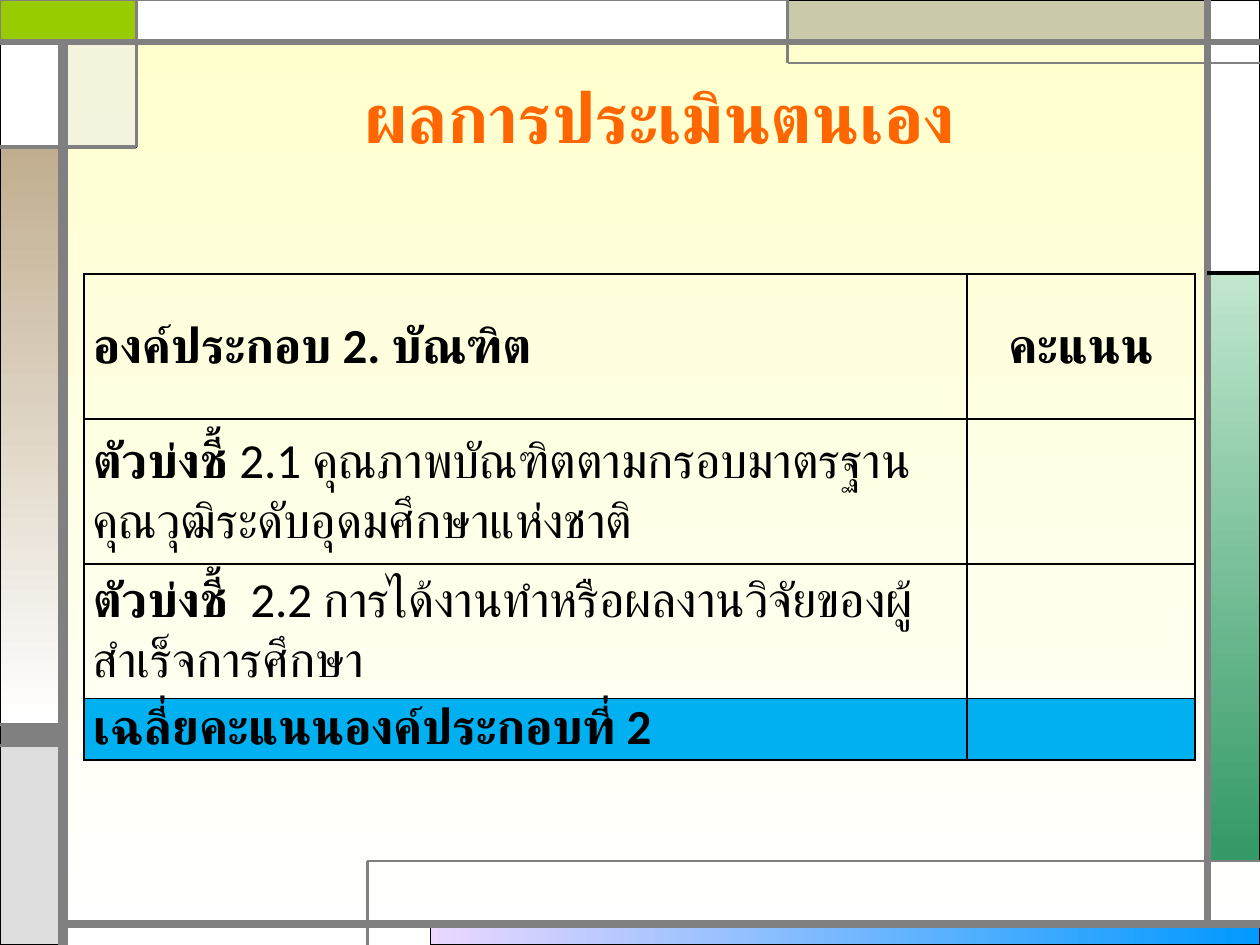
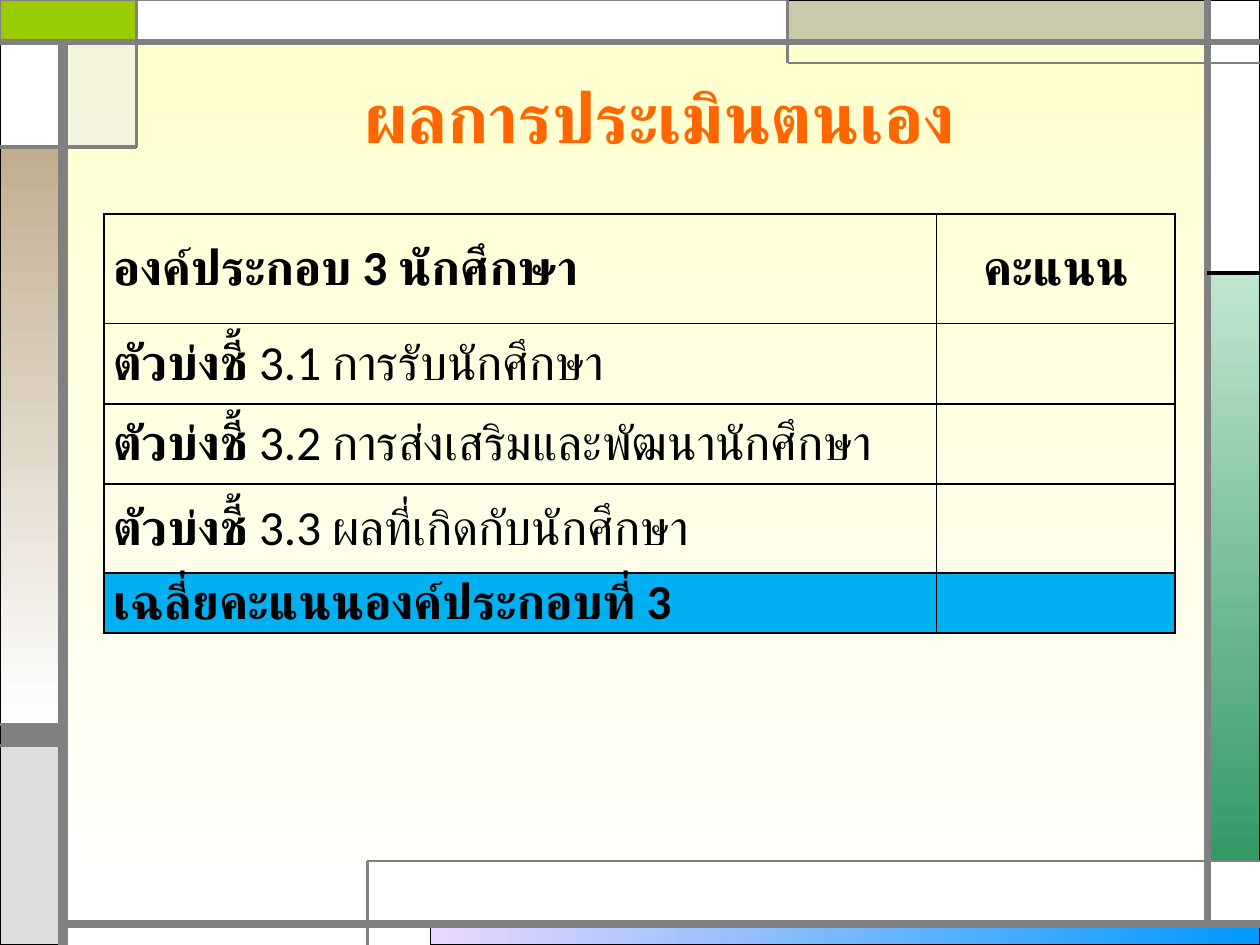
from dataclasses import dataclass

from lxml import etree
from pptx import Presentation
from pptx import util as u
from pptx.dml.color import RGBColor
from pptx.enum import shapes, text
from pptx.oxml import ns

COLS, ROWS = 120, 90
CELL = u.Inches(10) // COLS


@dataclass(frozen=True)
class Theme:
    font: str = "Calibri"
    head: int = 40
    body: int = 28
    title: str = "FF6600"
    ink: str = "000000"
    rule: str = "808080"
    total: str = "00B0F0"
    page: tuple = ("FFFFCC", "FFFFFF", 270)
    white: str = "FFFFFF"
    lime: str = "99CC00"
    khaki: str = "CAC9AA"
    mist: str = "EAEAEA"
    ash: str = "DDDDDD"
    sand: tuple = ("C1AE8F", "FFFFFF", 270)
    green: tuple = ("C1E7CE", "339966", 270)
    sky: tuple = ("EBD7FF", "0099FF", 0)


def grid(*sizes):
    return [round(size * CELL) for size in sizes]


def sub(parent, tag, **attrs):
    return etree.SubElement(parent, ns.qn(tag), attrs)


def paint(fill, color):
    """Fill with one colour, or with a (start, end, angle) gradient."""
    if isinstance(color, str):
        fill.solid()
        fill.fore_color.rgb = RGBColor.from_string(color)
        return
    *ends, angle = color
    fill.gradient()
    fill.gradient_angle = angle
    for stop, end in zip(fill.gradient_stops, ends):
        stop.color.rgb = RGBColor.from_string(end)


class Deck:
    def __init__(self, theme):
        self.theme = theme
        self.prs = Presentation()
        self.prs.slide_width, self.prs.slide_height = grid(COLS, ROWS)
        self.master = self.prs.slide_master
        self.slide = None
        paint(self.master.background.fill, theme.page)

    def page(self, title):
        self.slide = self.prs.slides.add_slide(self.prs.slide_layouts[5])
        box = self.slide.shapes.title
        box.left, box.top, box.width, box.height = grid(11.8, 3.5, 102, 15)
        frame = box.text_frame
        frame.text = title
        frame.vertical_anchor = text.MSO_ANCHOR.MIDDLE
        frame.paragraphs[0].alignment = text.PP_ALIGN.CENTER
        self.style(frame.paragraphs[0].runs[0], self.theme.head,
                   self.theme.title)

    def style(self, run, size, color, bold=True):
        font = run.font
        font.name, font.size, font.bold = self.theme.font, u.Pt(size), bold
        font.color.rgb = RGBColor.from_string(color)
        sub(font._element, "a:cs", typeface=self.theme.font)

    def stroke(self, line, color, width):
        paint(line.fill, color)
        line.width = u.Pt(width)

    def block(self, group, box, fill, edge=None, width=0.75, alpha=None):
        shape = group.shapes.add_shape(shapes.MSO_SHAPE.RECTANGLE, *grid(*box))
        shape.shadow.inherit = False
        paint(shape.fill, fill)
        if alpha:
            color = shape.element.spPr.find(".//" + ns.qn("a:srgbClr"))
            sub(color, "a:alpha", val=str(alpha * 1000))
        self.stroke(shape.line, edge or self.theme.ink, width)

    def rule(self, group, ends, width, color=None):
        line = group.shapes.add_connector(shapes.MSO_CONNECTOR.STRAIGHT,
                                          *grid(*ends))
        self.stroke(line.line, color or self.theme.rule, width)
        sub(line.element.spPr, "a:effectLst")

    def frame(self):
        """Draw the border of blocks and rules, then move it to the master."""
        t = self.theme
        group = self.slide.shapes.add_group_shape()
        for box, fill, *rest in (
            ((41, 88, 79, 2), t.sky),
            ((115, 26, 5, 56), t.green),
            ((0, 69, 6, 2), t.rule),
            ((0, 71, 6, 19), t.ash),
            ((115, 0, 5, 26), t.white),
            ((75, 0, 40, 4), t.khaki),
            ((6, 4, 7, 10), t.mist, t.ink, 0.75, 50),
            ((0, 14, 6, 55), t.sand),
            ((0, 4, 6, 10), t.white),
            ((0, 0, 13, 4), t.lime, t.rule, 1.5),
            ((13, 0, 62, 4), t.white, t.rule),
        ):
            self.block(group, box, fill, *rest)
        for ends, width, *rest in (
            ((6, 90, 6, 4), 6),
            ((6, 88, 120, 88), 4.5),
            ((115, 88, 115, 0), 4.5),
            ((0, 4, 120, 4), 3),
            ((120, 6, 75, 6), 1.5),
            ((75, 6, 75, 0), 1.5),
            ((115, 26, 120, 26), 2.25, t.ink),
            ((13, 0, 13, 14), 1.5),
            ((13, 14, 0, 14), 2.25),
            ((35, 90, 35, 82), 1.5),
            ((35, 82, 120, 82), 1.5),
            ((6, 69, 0, 69), 2.25),
            ((6, 71, 0, 71), 2.25),
        ):
            self.rule(group, ends, width, *rest)
        self.master.shapes.element.insert(2, group.element)

    def border(self, cell):
        props = cell._tc.get_or_add_tcPr()
        for side in ("a:lnL", "a:lnR", "a:lnT", "a:lnB"):
            line = sub(props, side, w=str(u.Pt(1)))
            sub(sub(line, "a:solidFill"), "a:srgbClr", val=self.theme.ink)

    def label(self, cell, words, align, anchor):
        """Set bold words in a cell; those after a bar are plain."""
        cell.margin_left = cell.margin_right = u.Inches(0.07)
        cell.margin_top = cell.margin_bottom = 0
        cell.vertical_anchor = anchor
        para = cell.text_frame.paragraphs[0]
        para.alignment = align
        for part, bold in zip(words.split("|"), (True, False)):
            run = para.add_run()
            run.text = part
            self.style(run, self.theme.body, self.theme.ink, bold)

    def scores(self, spot, widths, rows):
        """Add a score table; rows are (height, words), the last a total."""
        heights = [height for height, _ in rows]
        table = self.slide.shapes.add_table(
            len(rows), len(widths),
            *grid(*spot, sum(widths), sum(heights))).table
        table.first_row = table.horz_banding = False
        for col, width in zip(table.columns, grid(*widths)):
            col.width = width
        for row, height in zip(table.rows, grid(*heights)):
            row.height = height
        last = len(rows) - 1
        for i, (_, words) in enumerate(rows):
            for cell in table.rows[i].cells:
                self.border(cell)
                if i == last:
                    paint(cell.fill, self.theme.total)
                else:
                    cell.fill.background()
            anchor = text.MSO_ANCHOR.TOP if i == last else text.MSO_ANCHOR.MIDDLE
            self.label(table.cell(i, 0), words, text.PP_ALIGN.LEFT, anchor)
        self.label(table.cell(0, 1), "คะแนน", text.PP_ALIGN.CENTER,
                   text.MSO_ANCHOR.MIDDLE)


def main():
    deck = Deck(Theme())
    title = "ผลการประเมินตนเอง"

    deck.page(title)
    deck.frame()
    deck.scores((8, 26.1), (84.1, 21.7), (
        (13.8, "องค์ประกอบ 2. บัณฑิต"),
        (13.8, "ตัวบ่งชี้ |2.1 คุณภาพบัณฑิตตามกรอบมาตรฐานคุณวุฒิระดับอุดมศึกษาแห่งชาติ"),
        (12.8, "ตัวบ่งชี้  |2.2 การได้งานทำหรือผลงานวิจัยของผู้สำเร็จการศึกษา"),
        (5.9, "เฉลี่ยคะแนนองค์ประกอบที่ 2"),
    ))

    deck.page(title)
    deck.scores((9.9, 20.4), (79.3, 22.7), (
        (10.4, "องค์ประกอบ 3 นักศึกษา"),
        (7.7, "ตัวบ่งชี้ |3.1 การรับนักศึกษา"),
        (7.6, "ตัวบ่งชี้ |3.2 การส่งเสริมและพัฒนานักศึกษา"),
        (8.5, "ตัวบ่งชี้ |3.3 ผลที่เกิดกับนักศึกษา"),
        (5.7, "เฉลี่ยคะแนนองค์ประกอบที่ 3"),
    ))
    deck.prs.save("out.pptx")


if __name__ == "__main__":
    main()
